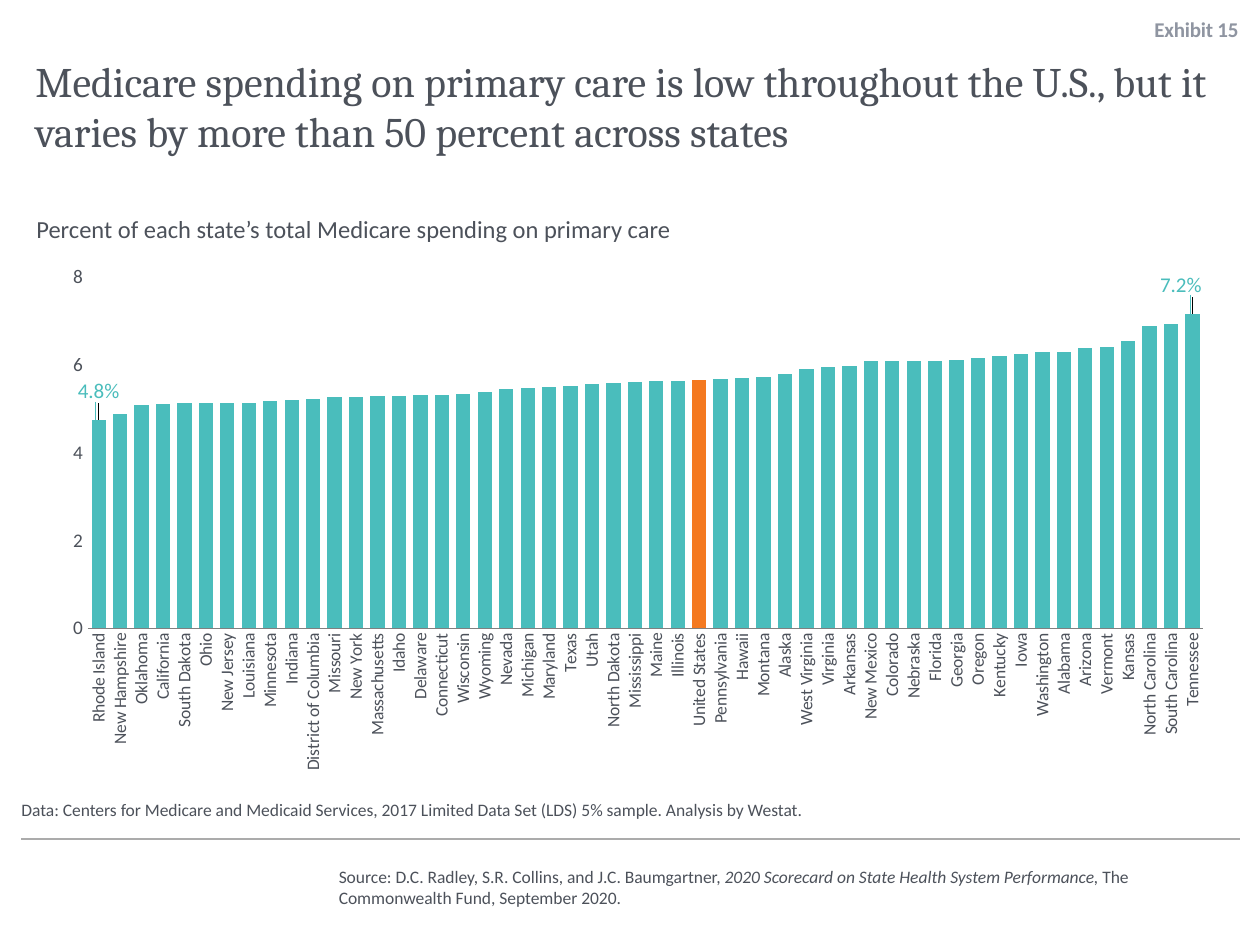
from lxml.etree import SubElement
from pptx import Presentation
from pptx.chart.data import CategoryChartData
from pptx.dml.color import RGBColor
from pptx.enum.chart import XL_CHART_TYPE, XL_LABEL_POSITION, XL_TICK_MARK
from pptx.enum.shapes import MSO_CONNECTOR
from pptx.enum.text import MSO_ANCHOR, MSO_AUTO_SIZE, PP_ALIGN
from pptx.oxml import parse_xml
from pptx.oxml.ns import nsdecls, qn
from pptx.util import Inches, Pt

INK = RGBColor(0x4C, 0x51, 0x5A)
MUTED = RGBColor(0x8F, 0x95, 0xA1)
RULE = RGBColor(0xAB, 0xAB, 0xAB)
AXIS = RGBColor(0x80, 0x80, 0x80)
TEAL = RGBColor(0x4A, 0xBD, 0xBC)
ORANGE = RGBColor(0xF4, 0x79, 0x20)

NATION = "United States"
SPENDING = {
    "Rhode Island": 4.75, "New Hampshire": 4.88, "Oklahoma": 5.09, "California": 5.1,
    "South Dakota": 5.12, "Ohio": 5.12, "New Jersey": 5.13, "Louisiana": 5.14,
    "Minnesota": 5.18, "Indiana": 5.19, "District of Columbia": 5.22, "Missouri": 5.26,
    "New York": 5.26, "Massachusetts": 5.28, "Idaho": 5.3, "Delaware": 5.31,
    "Connecticut": 5.31, "Wisconsin": 5.33, "Wyoming": 5.37, "Nevada": 5.46,
    "Michigan": 5.47, "Maryland": 5.5, "Texas": 5.51, "Utah": 5.56,
    "North Dakota": 5.59, "Mississippi": 5.61, "Maine": 5.62, "Illinois": 5.62,
    NATION: 5.66, "Pennsylvania": 5.68, "Hawaii": 5.69, "Montana": 5.73,
    "Alaska": 5.78, "West Virginia": 5.9, "Virginia": 5.95, "Arkansas": 5.98,
    "New Mexico": 6.08, "Colorado": 6.08, "Nebraska": 6.09, "Florida": 6.09,
    "Georgia": 6.11, "Oregon": 6.16, "Kentucky": 6.2, "Iowa": 6.25,
    "Washington": 6.3, "Alabama": 6.3, "Arizona": 6.39, "Vermont": 6.4,
    "Kansas": 6.55, "North Carolina": 6.89, "South Carolina": 6.93, "Tennessee": 7.16,
}


def style_font(font, size, color=INK, name="Calibri", bold=False, italic=False):
    font.size, font.name = Pt(size), name
    font.color.rgb = color
    font.bold, font.italic = bold, italic


def manual_layout(x, y, size=None):
    """Chart layout: an offset for a label, or an inner plot area when size is given."""
    target, edges, extent = "", "", ""
    if size:
        target = '<c:layoutTarget val="inner"/>'
        edges = '<c:xMode val="edge"/><c:yMode val="edge"/>'
        extent = f'<c:w val="{size[0]}"/><c:h val="{size[1]}"/>'
    return parse_xml(
        f'<c:layout {nsdecls("c")}><c:manualLayout>{target}{edges}'
        f'<c:x val="{x}"/><c:y val="{y}"/>{extent}</c:manualLayout></c:layout>')


class ExhibitPage:
    def __init__(self, page):
        self.page = page

    def fill_text(self, box, spans, anchor=MSO_ANCHOR.TOP, align=PP_ALIGN.LEFT, inset=None,
                  spacing=None, **style):
        """Fill a box with (text, italic) spans in one paragraph."""
        frame = box.text_frame
        frame.word_wrap = True
        frame.auto_size = MSO_AUTO_SIZE.NONE
        frame.vertical_anchor = anchor
        if inset is not None:
            frame.margin_left = frame.margin_right = Inches(inset)
            frame.margin_top = frame.margin_bottom = Inches(inset)
        para = frame.paragraphs[0]
        if box.is_placeholder:
            properties = para._p.get_or_add_pPr()
            properties.set("marL", "0")
            properties.set("indent", "0")
            SubElement(properties, qn("a:buNone"))
        para.alignment = align
        para.space_before = Pt(0)
        for text, italic in spans:
            span = para.add_run()
            span.text = text
            style_font(span.font, italic=italic, **style)
            if spacing:
                span.font._element.set("spc", str(spacing))

    def placeholder(self, index, text, place, **style):
        box = self.page.placeholders[index]
        box.left, box.top, box.width, box.height = map(Inches, place)
        self.fill_text(box, [(text, False)], **style)

    def text(self, spans, place, **style):
        self.fill_text(self.page.shapes.add_textbox(*map(Inches, place)), spans, **style)

    def line(self, start, end, color):
        line = self.page.shapes.add_connector(
            MSO_CONNECTOR.STRAIGHT, *map(Inches, start + end))
        line.line.color.rgb = color
        line.line.width = Pt(0.75)
        SubElement(line._element.spPr, qn("a:effectLst"))

    def column_chart(self, values, place, highlight, callouts):
        """Draw columns; callouts maps a category to its label's offset."""
        data = CategoryChartData()
        data.categories = list(values)
        data.add_series("Series 1", list(values.values()))
        chart = self.page.shapes.add_chart(
            XL_CHART_TYPE.COLUMN_CLUSTERED, *map(Inches, place), data).chart
        chart.has_title = chart.has_legend = False
        style_font(chart.font, 18)

        plot_area = chart._chartSpace.chart.plotArea
        for old in plot_area.findall(qn("c:layout")):
            plot_area.remove(old)
        plot_area.insert(0, manual_layout(0.044, 0.036, (0.955, 0.634)))

        names, scale = chart.category_axis, chart.value_axis
        for axis, size in ((names, 10), (scale, 11)):
            axis.major_tick_mark = axis.minor_tick_mark = XL_TICK_MARK.NONE
            axis.has_major_gridlines = False
            style_font(axis.tick_labels.font, size)
        names.format.line.color.rgb = AXIS
        turned = names._element.find(qn("c:txPr")).find(qn("a:bodyPr"))
        turned.set("rot", "-5400000")
        turned.set("vert", "horz")
        scale.minimum_scale, scale.maximum_scale, scale.major_unit = 0, 8, 2
        scale.format.line.fill.background()
        scale.tick_labels.number_format = "#,##0"
        scale.tick_labels.number_format_is_linked = False

        plot = chart.plots[0]
        plot.gap_width = 50
        plot.vary_by_categories = False
        series = plot.series[0]
        series.format.fill.solid()
        series.format.fill.fore_color.rgb = TEAL
        order = list(values)
        special = series.points[order.index(highlight)].format.fill
        special.solid()
        special.fore_color.rgb = ORANGE

        series.data_labels.show_value = False
        for name in callouts:
            label = series.points[order.index(name)].data_label
            style_font(label.font, 12, TEAL)
            label.position = XL_LABEL_POSITION.OUTSIDE_END
        for element, offset in zip(series._element.iter(qn("c:dLbl")), callouts.values()):
            element.insert(1, manual_layout(*offset))
            element.insert(2, parse_xml(
                f'<c:numFmt {nsdecls("c")} formatCode="0.0&quot;%&quot;" sourceLinked="0"/>'))


def main():
    deck = Presentation()
    deck.slide_width, deck.slide_height = Inches(10), Inches(7.5)
    exhibit = ExhibitPage(deck.slides.add_slide(deck.slide_layouts[3]))

    exhibit.text(
        [("Source: D.C. Radley, S.R. Collins, and J.C. Baumgartner, ", False),
         ("2020 Scorecard on State Health System Performance, ", True),
         ("The Commonwealth Fund, September 2020.", False)],
        (2.59, 6.82, 7.25, 0.44), anchor=MSO_ANCHOR.MIDDLE, size=10)
    exhibit.line((0.17, 6.66), (9.84, 6.66), RULE)
    exhibit.placeholder(
        0, "Medicare spending on primary care is low throughout the U.S., but it varies "
        "by more than 50 percent across states",
        (0.18, 0.39, 9.67, 1.04), size=24, name="Cambria")
    exhibit.placeholder(
        1, "Data: Centers for Medicare and Medicaid Services, 2017 Limited Data Set (LDS) "
        "5% sample. Analysis by Westat.",
        (0.17, 6.07, 9.67, 0.44), anchor=MSO_ANCHOR.BOTTOM, inset=0, size=10)
    exhibit.placeholder(
        2, "Exhibit 15", (7.96, 0.07, 1.87, 0.33), anchor=MSO_ANCHOR.MIDDLE,
        align=PP_ALIGN.RIGHT, inset=0, spacing=-10, size=12, color=MUTED, bold=True)
    exhibit.column_chart(
        SPENDING, (0.29, 2.04, 9.27, 4.4), NATION,
        {"Rhode Island": (0, -0.02), "Tennessee": (-0.01, -0.02)})
    exhibit.text(
        [("Percent of each state’s total Medicare spending on primary care", False)],
        (0.19, 1.65, 5.51, 0.34), size=14)
    for x, top in ((0.76, 3.19), (9.45, 2.34)):
        exhibit.line((x, top), (x, top + 0.18), TEAL)

    deck.save("out.pptx")


if __name__ == "__main__":
    main()
